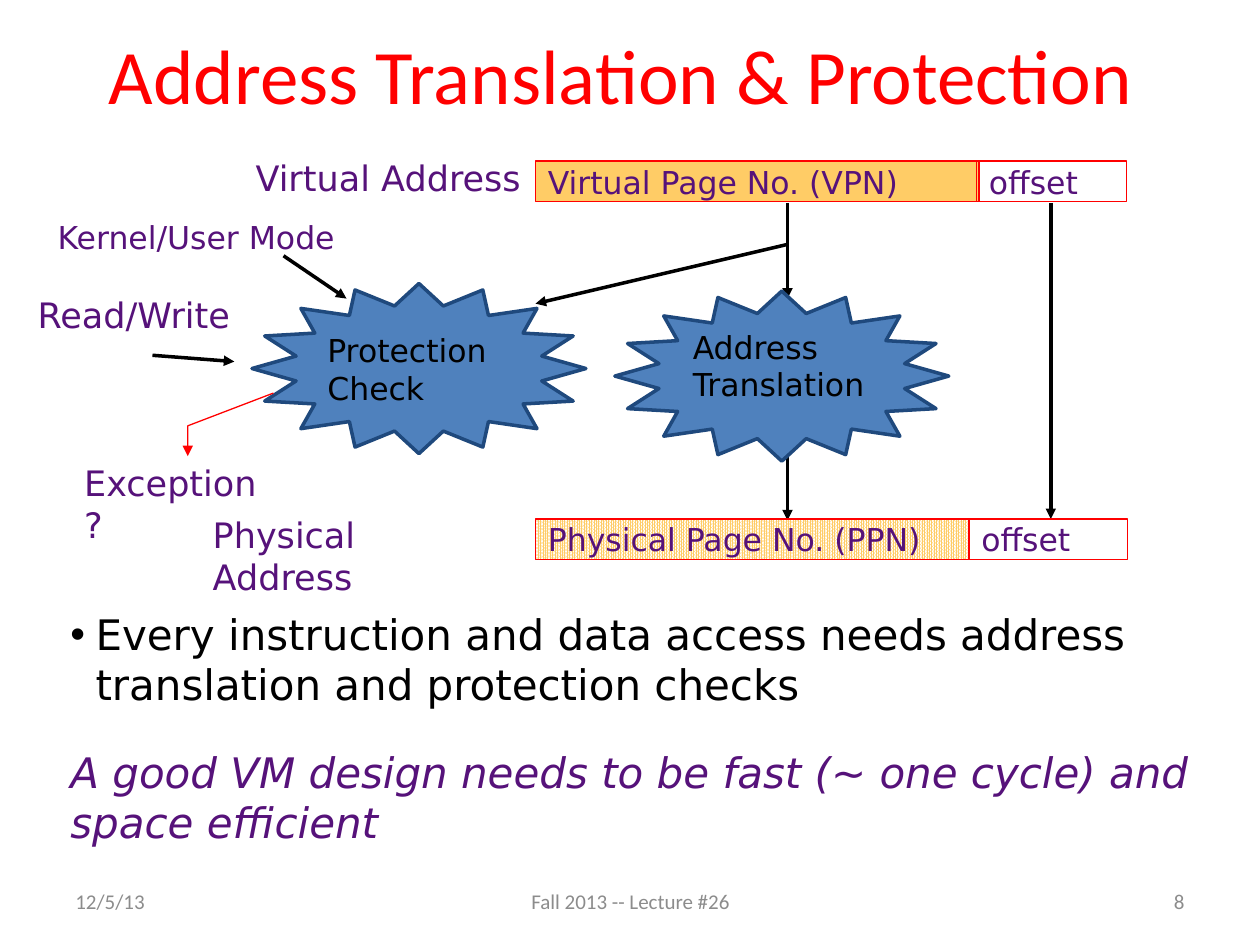
from lxml import etree
from pptx import Presentation
from pptx.dml.color import RGBColor
from pptx.enum.dml import MSO_PATTERN
from pptx.enum.shapes import MSO_CONNECTOR, MSO_SHAPE
from pptx.enum.text import MSO_ANCHOR, PP_ALIGN
from pptx.oxml.ns import qn
from pptx.util import Inches, Pt

STRAIGHT = MSO_CONNECTOR.STRAIGHT
STAR, RECTANGLE = MSO_SHAPE.STAR_16_POINT, MSO_SHAPE.RECTANGLE
MIDDLE, TOP = MSO_ANCHOR.MIDDLE, MSO_ANCHOR.TOP
LEFT, CENTER, RIGHT = PP_ALIGN.LEFT, PP_ALIGN.CENTER, PP_ALIGN.RIGHT
DENSE_DOTS = MSO_PATTERN.PERCENT_90

BLACK = RGBColor(0x00, 0x00, 0x00)
WHITE = RGBColor(0xFF, 0xFF, 0xFF)
RED = RGBColor(0xFF, 0x00, 0x00)
PURPLE = RGBColor(0x56, 0x12, 0x7A)
ORANGE = RGBColor(0xFF, 0xCC, 0x66)
BLUE = RGBColor(0x4F, 0x81, 0xBD)
NAVY = RGBColor(0x1F, 0x49, 0x7D)
GRAY = RGBColor(0x8C, 0x8C, 0x8C)
HEADING_FONT, DIAGRAM_FONT = "Calibri", "DejaVu Sans"

prs = Presentation()
prs.slide_width, prs.slide_height = Inches(10), Inches(7.5)
slide = prs.slides.add_slide(prs.slide_layouts[6])
shapes = slide.shapes


def write(frame, lines, size, color, font=DIAGRAM_FONT, align=LEFT, anchor=TOP):
    """Fill a text frame with one paragraph per line, all in one style."""
    frame.word_wrap = True
    frame.vertical_anchor = anchor
    for index, line in enumerate(lines):
        paragraph = frame.add_paragraph() if index else frame.paragraphs[0]
        paragraph.text = line
        paragraph.alignment = align
        paragraph.font.size = Pt(size)
        paragraph.font.name = font
        paragraph.font.color.rgb = color


def style_arrow(arrow, color, width):
    """Set the line and put a triangle at its end."""
    arrow.line.color.rgb = color
    arrow.line.width = Pt(width)
    line = arrow.line._get_or_add_ln()
    etree.SubElement(line, qn("a:tailEnd"), type="triangle")


# Data flow arrows
VPN_X, OFFSET_X = 6.25, 8.34
for x1, y1, x2, y2 in [
    (VPN_X, 3.53, VPN_X, 4.13),
    (VPN_X, 1.61, VPN_X, 2.37),
    (OFFSET_X, 1.61, OFFSET_X, 4.12),
    (VPN_X, 1.94, 4.25, 2.41),
    (1.21, 2.82, 1.86, 2.87),
    (2.25, 2.03, 2.75, 2.37),
]:
    arrow = shapes.add_connector(STRAIGHT, Inches(x1), Inches(y1), Inches(x2), Inches(y2))
    style_arrow(arrow, BLACK, 2)
    etree.SubElement(arrow._element.spPr, qn("a:effectLst"))

# Processing steps
for left, top in [(2, 2.25), (4.88, 2.31)]:
    step = shapes.add_shape(STAR, Inches(left), Inches(top), Inches(2.65), Inches(1.35))
    step.shadow.inherit = False
    step.fill.solid()
    step.fill.fore_color.rgb = BLUE
    step.line.color.rgb = NAVY
    step.line.width = Pt(2)

# Exception path
builder = shapes.build_freeform(Inches(2.17), Inches(3.12))
builder.add_line_segments([(Inches(1.49), Inches(3.38)), (Inches(1.49), Inches(3.62))], close=False)
exception_path = builder.convert_to_shape()
exception_path.shadow.inherit = False
exception_path.fill.background()
style_arrow(exception_path, RED, 0.75)

# Address fields
for label, left, top, width, fill in [
    ("Virtual Page No. (VPN)", 4.25, 1.28, 3.52, ORANGE),
    ("offset", 7.75, 1.28, 1.19, None),
    ("Physical Page No. (PPN)", 4.25, 4.12, 3.52, DENSE_DOTS),
    ("offset", 7.69, 4.12, 1.26, WHITE),
]:
    field = shapes.add_shape(RECTANGLE, Inches(left), Inches(top), Inches(width), Inches(0.32))
    field.shadow.inherit = False
    if fill is None:
        field.fill.background()
    elif fill == DENSE_DOTS:
        field.fill.patterned()
        field.fill.pattern = DENSE_DOTS
        field.fill.fore_color.rgb = ORANGE
        field.fill.back_color.rgb = WHITE
    else:
        field.fill.solid()
        field.fill.fore_color.rgb = fill
    field.line.color.rgb = RED
    field.line.width = Pt(1)
    write(field.text_frame, [label], 18, PURPLE, anchor=MIDDLE)

# Diagram labels
for lines, left, top, width, height, size, color in [
    (["Virtual Address"], 1.93, 1.19, 2.32, 0.43, 20, PURPLE),
    (["Physical Address"], 1.59, 4.03, 1.7, 0.76, 20, PURPLE),
    (["Exception?"], 0.57, 3.61, 1.6, 0.76, 20, PURPLE),
    (["Kernel/User Mode"], 0.36, 1.68, 2.44, 0.4, 18, PURPLE),
    (["Read/Write"], 0.2, 2.28, 1.91, 0.43, 20, PURPLE),
    (["Protection", "Check"], 2.5, 2.58, 1.47, 0.7, 18, BLACK),
    (["Address", "Translation"], 5.4, 2.55, 1.63, 0.72, 18, BLACK),
]:
    label = shapes.add_textbox(Inches(left), Inches(top), Inches(width), Inches(height))
    write(label.text_frame, lines, size, color)

# Title and footer
for text, left, top, width, height, size, color, align in [
    ("Address Translation & Protection", 0.36, 0.08, 9.14, 1.01, 44, RED, CENTER),
    ("12/5/13", 0.5, 6.95, 2.33, 0.4, 12, GRAY, LEFT),
    ("Fall 2013 -- Lecture #26", 3.42, 6.95, 3.17, 0.4, 12, GRAY, CENTER),
    ("8", 7.17, 6.95, 2.33, 0.4, 12, GRAY, RIGHT),
]:
    heading = shapes.add_textbox(Inches(left), Inches(top), Inches(width), Inches(height))
    write(heading.text_frame, [text], size, color, HEADING_FONT, align, MIDDLE)

# Takeaways
takeaways = shapes.add_textbox(Inches(0.46), Inches(4.78), Inches(9.21), Inches(1.99))
write(takeaways.text_frame, [
    "Every instruction and data access needs address translation and protection checks",
    "A good VM design needs to be fast (~ one cycle) and space efficient",
], 24, BLACK)
requirement, goal = takeaways.text_frame.paragraphs
properties = requirement._p.get_or_add_pPr()
properties.set("marL", str(Inches(0.2)))
properties.set("indent", str(-Inches(0.2)))
etree.SubElement(properties, qn("a:buFont"), typeface="Arial")
etree.SubElement(properties, qn("a:buChar"), char="•")
# Schema order puts the default run properties after the bullet
properties.append(properties.find(qn("a:defRPr")))
goal.space_before = Pt(21)
goal.font.italic = True
goal.font.color.rgb = PURPLE

prs.save("out.pptx")
